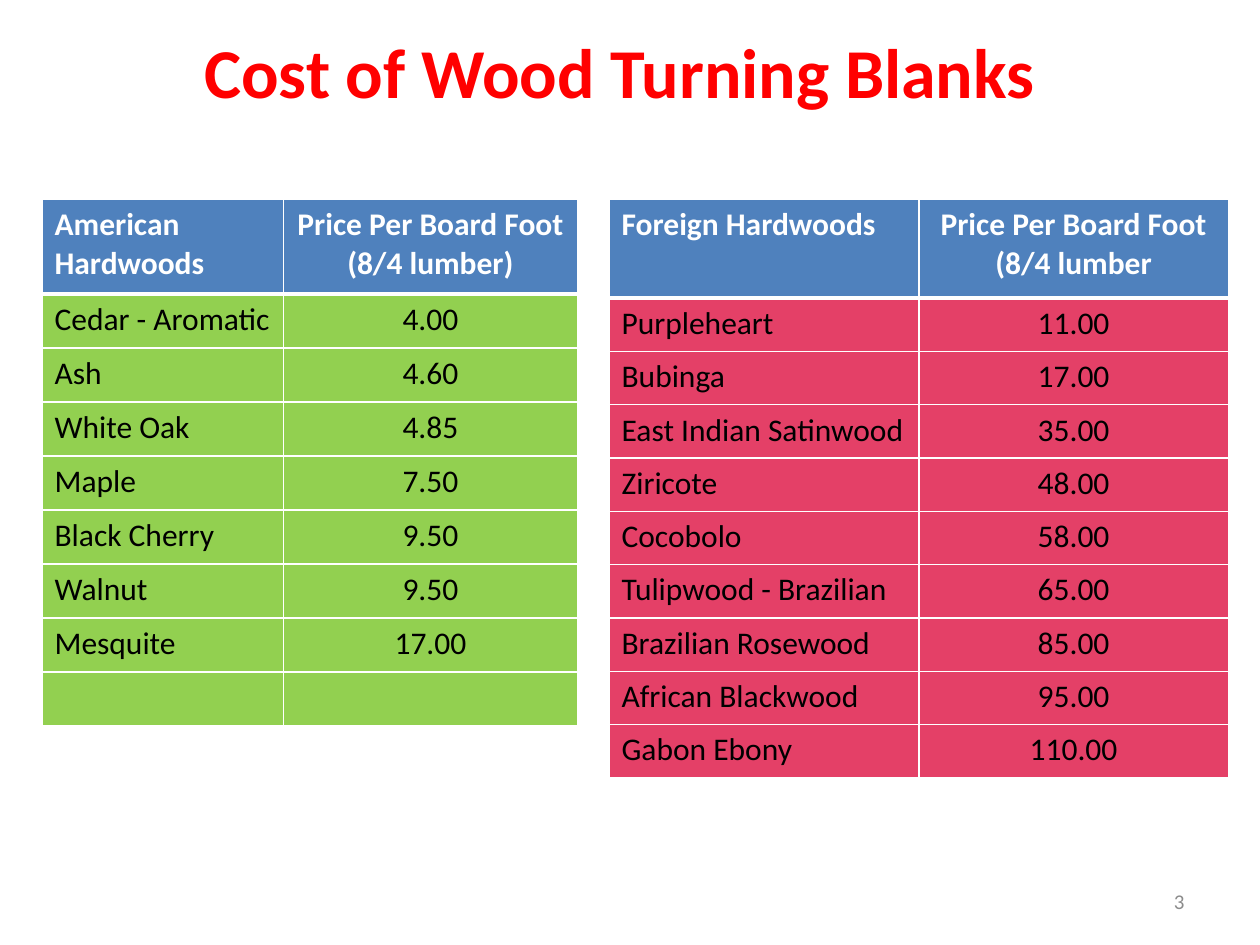
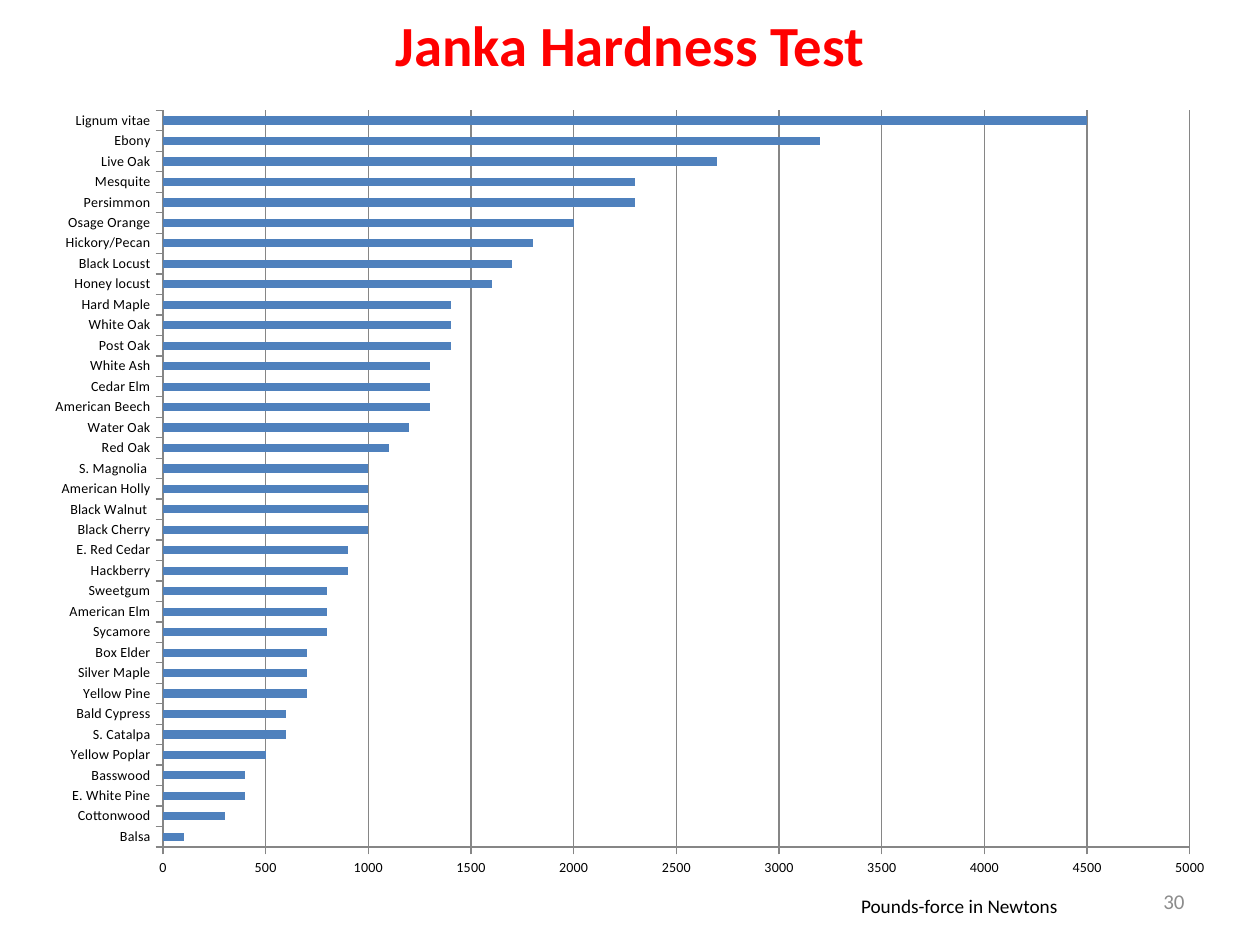
import dataclasses

import pptx
import pptx.chart.data
import pptx.dml.color
import pptx.enum.chart
import pptx.enum.text
import pptx.oxml
import pptx.oxml.ns
import pptx.util

Pt = pptx.util.Pt
Align = pptx.enum.text.PP_ALIGN
Anchor = pptx.enum.text.MSO_ANCHOR
FONT = "Calibri"
HUES = {
    "title": "FF0000",
    "head": "4F81BD",
    "local": "92D050",
    "foreign": "E44067",
    "light": "FFFFFF",
    "dark": "000000",
    "page": "8C8C8C",
    "axis": "868686",
}


@dataclasses.dataclass
class Box:
    left: float
    top: float
    width: float
    height: float

    def place(self) -> tuple:
        return Pt(self.left), Pt(self.top), Pt(self.width), Pt(self.height)


@dataclasses.dataclass
class Grid:
    left: float
    top: float
    widths: tuple
    head: float
    step: float
    hue: str
    rows: list


@dataclasses.dataclass
class Plain:
    left: float
    top: float
    widths: tuple
    step: float
    size: float
    rows: list


PAGE = Box(516, 500.4, 168, 28.8)

GRIDS = [
    Grid(24, 114, (138, 168), 54, 30.85, "local", [
        ("American Hardwoods", "Price Per Board Foot (8/4 lumber)"),
        ("Cedar - Aromatic", "4.00"),
        ("Ash", "4.60"),
        ("White Oak", "4.85"),
        ("Maple", "7.50"),
        ("Black Cherry", "9.50"),
        ("Walnut", "9.50"),
        ("Mesquite", "17.00"),
        ("", ""),
    ]),
    Grid(348, 114, (177, 177), 56.3, 30.48, "foreign", [
        ("Foreign Hardwoods", "Price Per Board Foot (8/4 lumber"),
        ("Purpleheart", "11.00"),
        ("Bubinga", "17.00"),
        ("East Indian Satinwood", "35.00"),
        ("Ziricote", "48.00"),
        ("Cocobolo", "58.00"),
        ("Tulipwood - Brazilian", "65.00"),
        ("Brazilian Rosewood", "85.00"),
        ("African Blackwood", "95.00"),
        ("Gabon Ebony", "110.00"),
    ]),
]

WOODS = {
    "Balsa": 100, "Cottonwood": 300, "E. White Pine": 400, "Basswood": 400,
    "Yellow Poplar": 500, "S. Catalpa": 600, "Bald Cypress": 600,
    "Yellow Pine": 700, "Silver Maple": 700, "Box Elder": 700,
    "Sycamore": 800, "American Elm": 800, "Sweetgum": 800, "Hackberry": 900,
    "E. Red Cedar": 900, "Black Cherry": 1000, "Black Walnut ": 1000,
    "American Holly": 1000, "S. Magnolia ": 1000, "Red Oak": 1100,
    "Water Oak": 1200, "American Beech": 1300, "Cedar Elm": 1300,
    "White Ash": 1300, "Post Oak": 1400, "White Oak": 1400,
    "Hard Maple": 1400, "Honey locust": 1600, "Black Locust": 1700,
    "Hickory/Pecan": 1800, "Osage Orange": 2000, "Persimmon": 2300,
    "Mesquite": 2300, "Live Oak": 2700, "Ebony": 3200, "Lignum vitae": 4500,
}

PLAINS = [
    Plain(492, 510, (138,), 15, 11, [("Pounds-force in Newtons",)]),
    Plain(654, 24, (42, 24), 5.04, 4, [("", "")] * len(WOODS)),
]


def tint(name: str) -> pptx.dml.color.RGBColor:
    return pptx.dml.color.RGBColor.from_string(HUES[name])


def style(font, size: float, hue: str, bold: bool = False) -> None:
    font.name = FONT
    font.size = Pt(size)
    font.bold = bold
    font.color.rgb = tint(hue)


def write(frame, text: str, size: float, hue: str, align, bold: bool = False) -> None:
    frame.text = text
    line = frame.paragraphs[0]
    line.alignment = align
    style(line.font, size, hue, bold)
    for run in line.runs:
        style(run.font, size, hue, bold)
    if not text:
        end = line._p.get_or_add_endParaRPr()
        end.set("sz", str(round(size * 100)))


def start(deck, title: str, box: Box, size: float, page: str):
    slide = deck.slides.add_slide(deck.slide_layouts[5])
    head = slide.shapes.title
    head.left, head.top, head.width, head.height = box.place()
    write(head.text_frame, title, size, "title", Align.CENTER, True)
    head.text_frame.vertical_anchor = Anchor.MIDDLE
    frame = slide.shapes.add_textbox(*PAGE.place()).text_frame
    frame.word_wrap = True
    frame.vertical_anchor = Anchor.MIDDLE
    write(frame, page, 12, "page", Align.RIGHT)
    return slide


def edge(cell, side: str, width: float) -> None:
    space = pptx.oxml.ns.nsdecls("a")
    line = pptx.oxml.parse_xml(
        f'<a:ln{side} {space} w="{Pt(width)}"><a:solidFill>'
        f'<a:srgbClr val="{HUES["light"]}"/></a:solidFill></a:ln{side}>'
    )
    cell._tc.get_or_add_tcPr().append(line)


def table(slide, left: float, top: float, widths: tuple, steps: list):
    box = Box(left, top, sum(widths), sum(steps))
    grid = slide.shapes.add_table(len(steps), len(widths), *box.place()).table
    grid.first_row = grid.horz_banding = False
    for col, width in zip(grid.columns, widths):
        col.width = Pt(width)
    for row, step in zip(grid.rows, steps):
        row.height = Pt(step)
    return grid


def draw_grid(slide, spec: Grid) -> None:
    steps = [spec.head] + [spec.step] * (len(spec.rows) - 1)
    grid = table(slide, spec.left, spec.top, spec.widths, steps)
    for row, texts in enumerate(spec.rows):
        first = row == 0
        sides = {"L": 1, "R": 1, "T": 3 if row == 1 else 1, "B": 3 if first else 1}
        for col, text in enumerate(texts):
            cell = grid.cell(row, col)
            for side, width in sides.items():
                edge(cell, side, width)
            cell.fill.solid()
            cell.fill.fore_color.rgb = tint("head" if first else spec.hue)
            align = Align.CENTER if col else Align.LEFT
            write(cell.text_frame, text, 18, "light" if first else "dark", align, first)


def draw_plain(slide, spec: Plain) -> None:
    grid = table(slide, spec.left, spec.top, spec.widths, [spec.step] * len(spec.rows))
    style_id = grid._tbl.tblPr.find(pptx.oxml.ns.qn("a:tableStyleId"))
    style_id.text = "{2D5ABB26-0587-4C30-8999-92F81FD0307C}"
    for row, texts in enumerate(spec.rows):
        for col, text in enumerate(texts):
            cell = grid.cell(row, col)
            cell.fill.background()
            cell.margin_left = cell.margin_right = cell.margin_top = cell.margin_bottom = 0
            cell.vertical_anchor = Anchor.BOTTOM
            write(cell.text_frame, text, spec.size, "dark", Align.LEFT)


def draw_chart(slide, box: Box) -> None:
    data = pptx.chart.data.CategoryChartData()
    data.categories = list(WOODS)
    data.add_series("Series 1", list(WOODS.values()))
    kind = pptx.enum.chart.XL_CHART_TYPE.BAR_CLUSTERED
    chart = slide.shapes.add_chart(kind, *box.place(), data).chart
    chart.has_legend = chart.has_title = False
    style(chart.font, 8, "dark")
    plot = chart.plots[0]
    plot.gap_width = 150
    plot.vary_by_categories = False
    fill = plot.series[0].format.fill
    fill.solid()
    fill.fore_color.rgb = tint("head")
    scale = chart.value_axis
    scale.minimum_scale, scale.maximum_scale, scale.major_unit = 0, 5000, 500
    scale.has_major_gridlines = True
    scale.tick_labels.number_format = "General"
    scale.tick_labels.number_format_is_linked = False
    lines = [scale.major_gridlines.format.line]
    for axis in (scale, chart.category_axis):
        axis.major_tick_mark = pptx.enum.chart.XL_TICK_MARK.OUTSIDE
        lines.append(axis.format.line)
    for line in lines:
        line.color.rgb = tint("axis")
        line.width = Pt(0.75)


def main() -> None:
    deck = pptx.Presentation()
    deck.slide_width, deck.slide_height = Pt(720), Pt(540)
    cost = start(deck, "Cost of Wood Turning Blanks", Box(72, 12.5, 564, 56), 40, "3")
    for spec in GRIDS:
        draw_grid(cost, spec)
    test = start(deck, "Janka Hardness Test", Box(54, 0, 612, 50.4), 32.4, "30")
    for spec in PLAINS:
        draw_plain(test, spec)
    draw_chart(test, Box(18, 54, 684, 456))
    deck.save("out.pptx")


if __name__ == "__main__":
    main()
